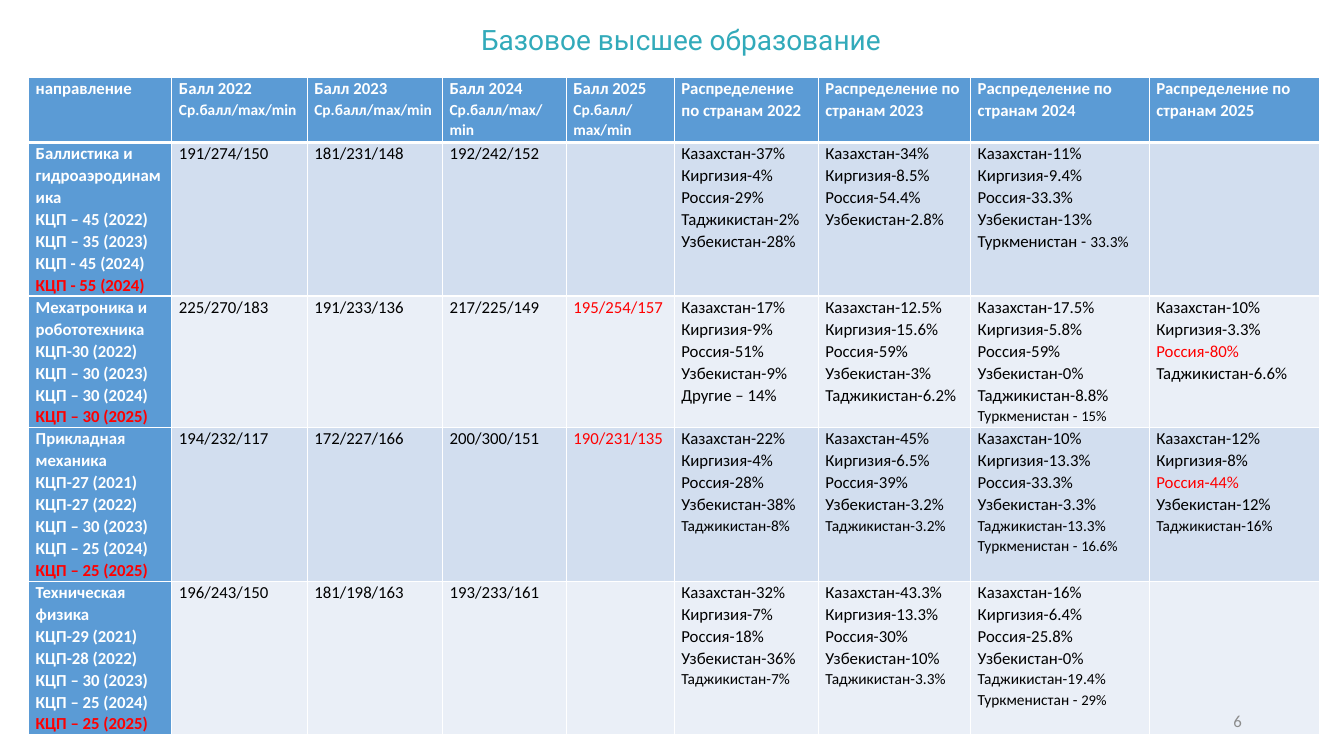
from dataclasses import dataclass

from lxml import etree
from pptx import Presentation
from pptx.dml.color import RGBColor
from pptx.enum.text import MSO_ANCHOR, MSO_AUTO_SIZE, PP_ALIGN
from pptx.oxml.ns import qn
from pptx.util import Cm, Pt

CENTER, RIGHT = PP_ALIGN.CENTER, PP_ALIGN.RIGHT
TOP, MIDDLE = MSO_ANCHOR.TOP, MSO_ANCHOR.MIDDLE
GROW = MSO_AUTO_SIZE.SHAPE_TO_FIT_TEXT


@dataclass(frozen=True)
class Theme:
    title_font: str = "Roboto"
    body_font: str = "Calibri"
    title_color: str = "32AABA"
    number_color: str = "8C8C8C"
    header_fill: str = "5B9BD5"
    bands: tuple = ("D2DEEF", "EAEFF7")
    white: str = "FFFFFF"
    black: str = "000000"
    red: str = "FF0000"
    title_size: float = 20
    body_sizes: tuple = (12, 11, 10.5)
    line_spacing: float = 1.07


THEME = Theme()

COLUMN_WIDTHS = (3.61, 3.41, 3.41, 3.12, 2.72, 3.63, 3.84, 4.5, 4.29)
ROW_HEIGHTS = (1.64, 3.87, 3.31, 3.87, 3.87)
YEARS = (2022, 2023, 2024, 2025)

# Lines of a cell are separated by ";". "!" makes a line red, "~" one size
# smaller, and the part after "|" is one size smaller than the rest.
HEADER = (
    ["направление"]
    + [f"Балл {year};~Ср.балл/max/min" for year in YEARS]
    + [f"Распределение по странам {year}" for year in YEARS]
)
PROGRAMMES = [
    [
        "Баллистика и гидроаэродинамика;КЦП – 45 (2022);КЦП – 35 (2023);"
        "КЦП - 45 (2024);!КЦП - 55 (2024)",
        "191/274/150", "181/231/148", "192/242/152", "",
        "Казахстан-37%;Киргизия-4%;Россия-29%;Таджикистан-2%;Узбекистан-28%",
        "Казахстан-34%;Киргизия-8.5%;Россия-54.4%;Узбекистан-2.8%",
        "Казахстан-11%;Киргизия-9.4%;Россия-33.3%;Узбекистан-13%;"
        "Туркменистан - |33.3%",
        "",
    ],
    [
        "Мехатроника и робототехника;КЦП-30 (2022);КЦП – 30 (2023);"
        "КЦП – 30 (2024);!КЦП – 30 (2025)",
        "225/270/183", "191/233/136", "217/225/149", "!195/254/157",
        "Казахстан-17%;Киргизия-9%;Россия-51%;Узбекистан-9%;Другие – 14%",
        "Казахстан-12.5%;Киргизия-15.6%;Россия-59%;Узбекистан-3%;"
        "Таджикистан-6.2%",
        "Казахстан-17.5%;Киргизия-5.8%;Россия-59%;Узбекистан-0%;"
        "Таджикистан-8.8%;~Туркменистан - |15%",
        "Казахстан-10%;Киргизия-3.3%;!Россия-80%;Таджикистан-6.6%",
    ],
    [
        "Прикладная механика;КЦП-27 (2021);КЦП-27 (2022);КЦП – 30 (2023);"
        "КЦП – 25 (2024);!КЦП – 25 (2025)",
        "194/232/117", "172/227/166", "200/300/151", "!190/231/135",
        "Казахстан-22%;Киргизия-4%;Россия-28%;Узбекистан-38%;~Таджикистан-8%",
        "Казахстан-45%;Киргизия-6.5%;Россия-39%;Узбекистан-3.2%;"
        "~Таджикистан-3.2%",
        "Казахстан-10%;Киргизия-13.3%;Россия-33.3%;Узбекистан-3.3%;"
        "~Таджикистан-13.3%;~Туркменистан - |16.6%",
        "Казахстан-12%;Киргизия-8%;!Россия-44%;Узбекистан-12%;"
        "~Таджикистан-16%",
    ],
    [
        "Техническая физика;КЦП-29 (2021);КЦП-28 (2022);КЦП – 30 (2023);"
        "КЦП – 25 (2024);!КЦП – 25 (2025)",
        "196/243/150", "181/198/163", "193/233/161", "",
        "Казахстан-32%;Киргизия-7%;Россия-18%;Узбекистан-36%;~Таджикистан-7%",
        "Казахстан-43.3%;Киргизия-13.3%;Россия-30%;Узбекистан-10%;"
        "~Таджикистан-3.3%",
        "Казахстан-16%;Киргизия-6.4%;Россия-25.8%;Узбекистан-0%;"
        "~Таджикистан-19.4%;~Туркменистан - |29%",
        "",
    ],
]


def format_font(font, name, size, color, bold=False):
    font.name = name
    font.size = Pt(size)
    font.bold = bold
    font.color.rgb = RGBColor.from_string(color)


def add_label(slide, box, text, font_name, size, color, alignment, anchor):
    """Add a one-line text box and return its text frame."""
    frame = slide.shapes.add_textbox(*map(Cm, box)).text_frame
    frame.word_wrap = True
    frame.vertical_anchor = anchor
    frame.text = text
    paragraph = frame.paragraphs[0]
    paragraph.alignment = alignment
    format_font(paragraph.runs[0].font, font_name, size, color)
    return frame


def set_borders(cell, bottom_width):
    properties = cell._tc.get_or_add_tcPr()
    for side, width in (("L", 1), ("R", 1), ("T", 1), ("B", bottom_width)):
        line = etree.SubElement(properties, qn(f"a:ln{side}"), w=str(Pt(width)))
        fill = etree.SubElement(line, qn("a:solidFill"))
        etree.SubElement(fill, qn("a:srgbClr"), val=THEME.white)


def write_line(paragraph, line, color, bold):
    """Write one marked-up line of a cell."""
    paragraph.line_spacing = THEME.line_spacing
    if line.startswith("!"):
        color = THEME.red
    first_size = 1 if line.startswith("~") else 0
    for step, text in enumerate(line.lstrip("!~").split("|")):
        run = paragraph.add_run()
        run.text = text
        size = THEME.body_sizes[first_size + step]
        format_font(run.font, THEME.body_font, size, color, bold)


def fill_cell(cell, content, fill, is_heading, bottom_width):
    set_borders(cell, bottom_width)
    cell.fill.solid()
    cell.fill.fore_color.rgb = RGBColor.from_string(fill)
    cell.margin_left = cell.margin_right = Cm(0.18)
    cell.margin_top = cell.margin_bottom = 0
    if not content:
        return
    frame = cell.text_frame
    color = THEME.white if is_heading else THEME.black
    for index, line in enumerate(content.split(";")):
        paragraph = frame.add_paragraph() if index else frame.paragraphs[0]
        write_line(paragraph, line, color, is_heading)


def add_score_table(slide, left, top):
    rows = [HEADER] + PROGRAMMES
    table = slide.shapes.add_table(
        len(rows), len(HEADER), Cm(left), Cm(top),
        Cm(sum(COLUMN_WIDTHS)), Cm(sum(ROW_HEIGHTS)),
    ).table
    for column, width in zip(table.columns, COLUMN_WIDTHS):
        column.width = Cm(width)
    for row_index, contents in enumerate(rows):
        table.rows[row_index].height = Cm(ROW_HEIGHTS[row_index])
        band = THEME.bands[(row_index - 1) % 2]
        bottom_width = 1 if row_index else 3
        for column_index, content in enumerate(contents):
            is_heading = row_index == 0 or column_index == 0
            fill = THEME.header_fill if is_heading else band
            cell = table.cell(row_index, column_index)
            fill_cell(cell, content, fill, is_heading, bottom_width)


def build_slide(presentation):
    slide = presentation.slides.add_slide(presentation.slide_layouts[6])
    add_score_table(slide, 0.72, 1.95)
    title = add_label(
        slide, (8.53, 0.43, 17.27, 1.12), "Базовое высшее образование",
        THEME.title_font, THEME.title_size, THEME.title_color, CENTER, TOP)
    title.auto_size = GROW
    add_label(
        slide, (23.93, 17.65, 7.62, 1.02), "6",
        THEME.body_font, THEME.body_sizes[0], THEME.number_color, RIGHT, MIDDLE)


def main():
    presentation = Presentation()
    presentation.slide_width = Cm(33.87)
    presentation.slide_height = Cm(19.05)
    build_slide(presentation)
    presentation.save("out.pptx")


if __name__ == "__main__":
    main()
